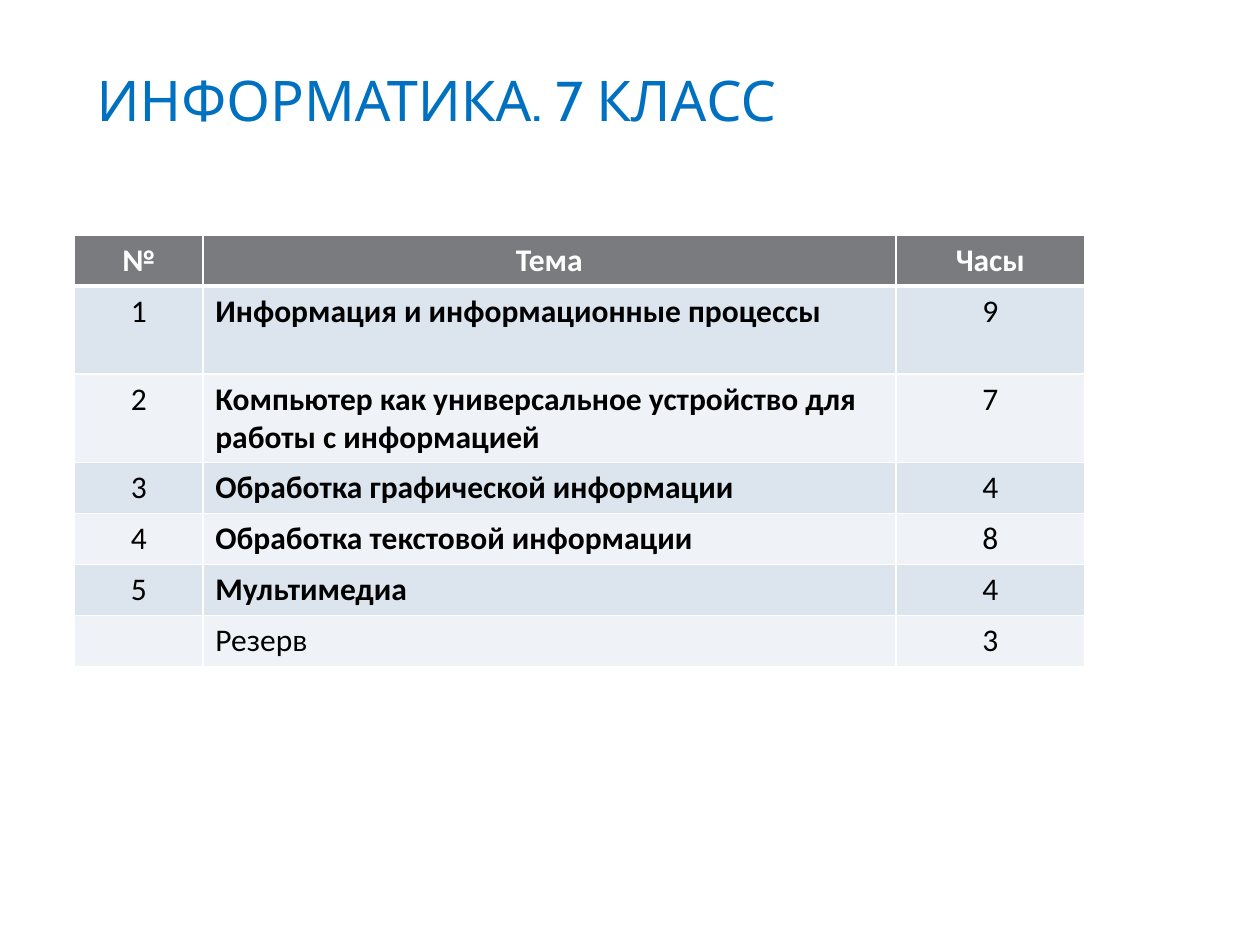
"""Build the grade 7 informatics course plan slide."""
import pptx
import pptx.dml.color
import pptx.enum.text
import pptx.oxml
import pptx.oxml.ns
import pptx.util
from pptx.util import Pt

TITLE = "ИНФОРМАТИКА. 7 КЛАСС"
HEADER = ("№", "Тема", "Часы")
TOPICS = [
    ("1", "Информация и информационные процессы", "9"),
    ("2", "Компьютер как универсальное устройство для работы с информацией", "7"),
    ("3", "Обработка графической информации", "4"),
    ("4", "Обработка текстовой информации", "8"),
    ("5", "Мультимедиа", "4"),
    ("", "Резерв", "3"),
]
COLUMN_WIDTHS = (73.2, 396, 108)
ROW_HEIGHTS = (29.2, 50.4, 50.4, 29.2, 29.2, 29.2, 29.2)
TABLE_LEFT, TABLE_TOP = 42.7, 134.2
TOPIC_COLUMN = 1
HEADER_FILL = "797B7E"
BAND_FILLS = ("DCE5EE", "EFF3F7")
WHITE, BLACK, BLUE = "FFFFFF", "000000", "0070C0"


def color(value):
    return pptx.dml.color.RGBColor.from_string(value)


def add_span(para, text, font, size, fill, bold=False):
    span = para.add_run()
    span.text = text
    span.font.name = font
    span.font.size = Pt(size)
    span.font.bold = bold
    span.font.color.rgb = color(fill)


def add_borders(cell, top, bottom):
    properties = cell._tc.get_or_add_tcPr()
    widths = (("lnL", 1), ("lnR", 1), ("lnT", top), ("lnB", bottom))
    for index, (side, width) in enumerate(widths):
        properties.insert(index, pptx.oxml.parse_xml(
            f'<a:{side} {pptx.oxml.ns.nsdecls("a")} w="{Pt(width)}"><a:solidFill>'
            f'<a:srgbClr val="{WHITE}"/></a:solidFill></a:{side}>'))


def add_title(page):
    box = page.shapes.add_textbox(Pt(48.2), Pt(18), Pt(642.2), Pt(77.8))
    frame = box.text_frame
    frame.word_wrap = True
    frame.vertical_anchor = pptx.enum.text.MSO_ANCHOR.MIDDLE
    add_span(frame.paragraphs[0], TITLE, "Cabin", 32, BLUE)


def add_plan(page):
    rows = [HEADER, *TOPICS]
    table = page.shapes.add_table(
        len(rows), len(HEADER), Pt(TABLE_LEFT), Pt(TABLE_TOP),
        Pt(sum(COLUMN_WIDTHS)), Pt(sum(ROW_HEIGHTS))).table
    for column, width in zip(table.columns, COLUMN_WIDTHS):
        column.width = Pt(width)
    for r, (texts, height) in enumerate(zip(rows, ROW_HEIGHTS)):
        table.rows[r].height = Pt(height)
        is_header = r == 0
        for c, text in enumerate(texts):
            cell = table.cell(r, c)
            cell.fill.solid()
            cell.fill.fore_color.rgb = color(HEADER_FILL if is_header else BAND_FILLS[(r - 1) % 2])
            add_borders(cell, 3 if r == 1 else 1, 3 if is_header else 1)
            para = cell.text_frame.paragraphs[0]
            if is_header or c != TOPIC_COLUMN:
                para.alignment = pptx.enum.text.PP_ALIGN.CENTER
            if text:
                numbered_topic = c == TOPIC_COLUMN and bool(texts[0])
                add_span(para, text, "Calibri", 18, WHITE if is_header else BLACK,
                         is_header or numbered_topic)


def main():
    deck = pptx.Presentation()
    deck.slide_width, deck.slide_height = Pt(720), Pt(540)
    page = deck.slides.add_slide(deck.slide_layouts[6])
    add_title(page)
    add_plan(page)
    deck.save("out.pptx")


if __name__ == "__main__":
    main()
